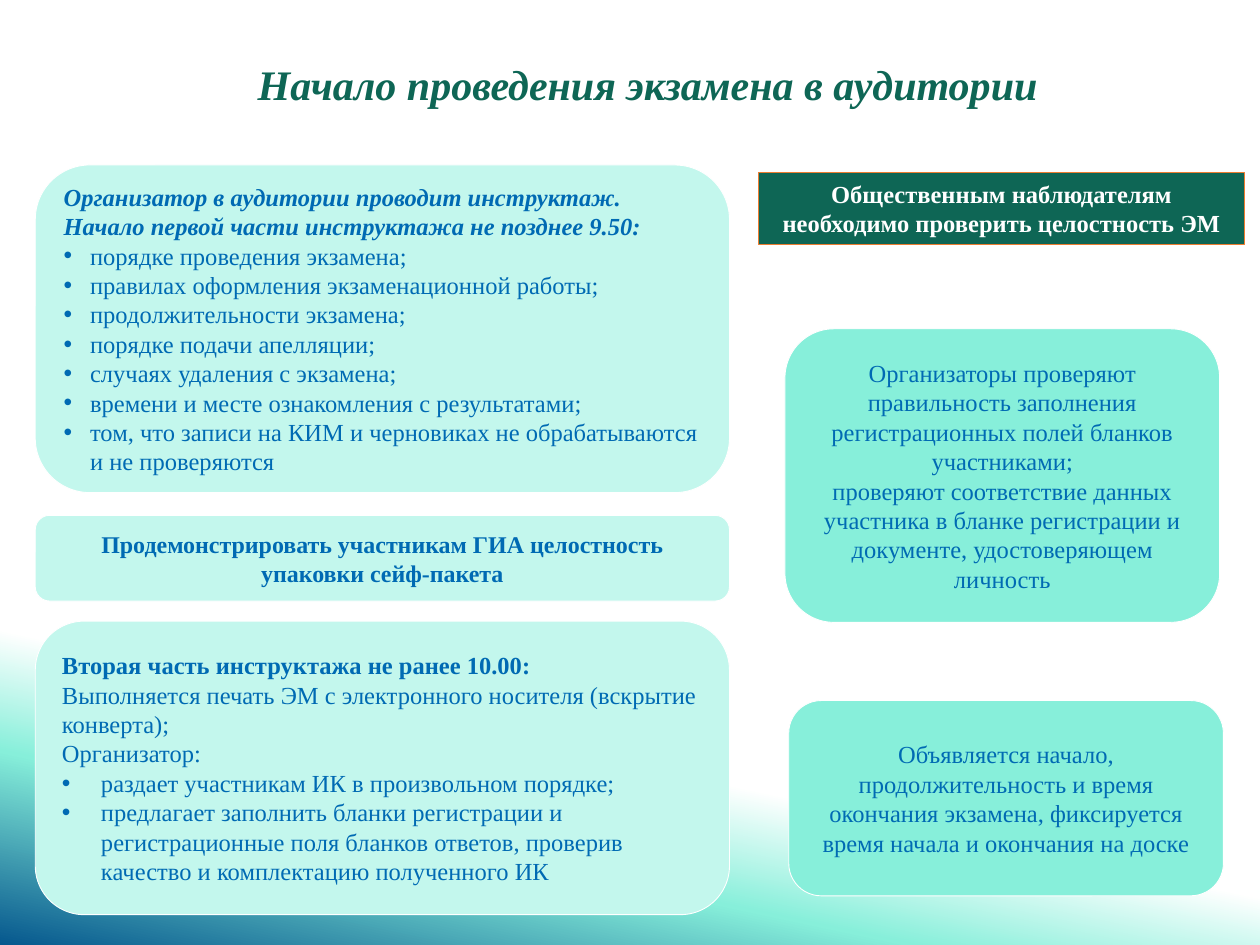
import copy
import pptx
import pptx.util
import pptx.dml.color
import pptx.enum.shapes
import pptx.enum.text
import pptx.oxml.ns
from lxml import etree

Inches = pptx.util.Inches
Pt = pptx.util.Pt
qn = pptx.oxml.ns.qn
SHAPE = pptx.enum.shapes.MSO_SHAPE
ALIGN = pptx.enum.text.PP_ALIGN
ANCHOR = pptx.enum.text.MSO_ANCHOR

FONT = "Times New Roman"
COLORS = {
    "green": "0E6655", "pale": "C3F7ED", "mint": "87EFDA", "blue": "006AB3",
    "navy": "06588E", "white": "FFFFFF", "orange": "ED7D31",
}


def rgb(name):
    return pptx.dml.color.RGBColor.from_string(COLORS[name])


def add_run(p, text, color="blue", size=14, bold=False, italic=False):
    r = p.add_run()
    r.text = text
    f = r.font
    f.name, f.size, f.bold, f.italic = FONT, Pt(size), bold, italic
    f.color.rgb = rgb(color)


def set_bullet(p, indent):
    pPr = p._p.get_or_add_pPr()
    pPr.set("marL", str(Inches(indent)))
    pPr.set("indent", str(-Inches(indent)))
    etree.SubElement(pPr, qn("a:buFont")).set("typeface", "Arial")
    etree.SubElement(pPr, qn("a:buChar")).set("char", "•")


def add_background(s):
    fill = s.background.fill
    fill.gradient()
    fill.gradient_angle = 360 - 102
    gs_list = s.element.find(".//" + qn("a:gsLst"))
    gs_list.append(copy.deepcopy(gs_list[-1]))
    stops = [(0.74, "white"), (0.84, "mint"), (1, "navy")]
    for stop, (position, color) in zip(fill.gradient_stops, stops):
        stop.position = position
        stop.color.rgb = rgb(color)


def add_title(s, box, text):
    title = s.shapes.title
    title.left, title.top, title.width, title.height = map(Inches, box)
    tf = title.text_frame
    tf.vertical_anchor = ANCHOR.MIDDLE
    p = tf.paragraphs[0]
    p.alignment = ALIGN.CENTER
    add_run(p, text, "green", 24, True, True)


def add_panel(s, box, paragraphs, fill, kind=SHAPE.ROUNDED_RECTANGLE, line="white",
              align=ALIGN.CENTER, anchor=ANCHOR.MIDDLE, indent=0):
    """Each paragraph is (text, is_bullet, run format)."""
    sp = s.shapes.add_shape(kind, *map(Inches, box))
    sp.shadow.inherit = False
    sp.fill.solid()
    sp.fill.fore_color.rgb = rgb(fill)
    sp.line.color.rgb = rgb(line)
    sp.line.width = Pt(0.5)
    tf = sp.text_frame
    tf.word_wrap = True
    tf.vertical_anchor = anchor
    for i, (text, is_bullet, style) in enumerate(paragraphs):
        p = tf.add_paragraph() if i else tf.paragraphs[0]
        p.alignment = align
        if is_bullet:
            set_bullet(p, indent)
        add_run(p, text, **style)
    return sp


def add_briefing_column(s, left, width):
    # First part of the briefing
    heading = {"bold": True, "italic": True}
    topics = [
        "порядке проведения экзамена;",
        "правилах оформления экзаменационной работы;",
        "продолжительности экзамена;",
        "порядке подачи апелляции;",
        "случаях удаления с экзамена;",
        "времени и месте ознакомления с результатами;",
        "том, что записи на КИМ и черновиках не обрабатываются и не проверяются",
    ]
    add_panel(s, (left, 1.31, width, 2.6), [
        ("Организатор в аудитории проводит инструктаж.", False, heading),
        ("Начало первой части инструктажа не позднее 9.50:", False, heading),
    ] + [(topic, True, {}) for topic in topics], "pale", align=ALIGN.LEFT, indent=0.21)

    # Sealed package
    add_panel(s, (left, 4.09, width, 0.68), [
        ("Продемонстрировать участникам ГИА целостность упаковки сейф-пакета", False,
         {"size": 13.7, "bold": True}),
    ], "pale")

    # Second part of the briefing
    add_panel(s, (left, 4.93, width, 2.33), [
        ("Вторая часть инструктажа не ранее 10.00:", False, {"bold": True}),
        ("Выполняется печать ЭМ с электронного носителя (вскрытие конверта);", False, {}),
        ("Организатор:", False, {}),
        ("раздает участникам ИК в произвольном порядке;", True, {}),
        ("предлагает заполнить бланки регистрации и регистрационные поля бланков "
         "ответов, проверив качество и комплектацию полученного ИК", True, {}),
    ], "pale", align=ALIGN.LEFT, indent=0.31)


def add_control_column(s, width):
    # Note for observers
    note = add_panel(s, (6.02, 1.37, 3.86, 0.57), [
        ("Общественным наблюдателям необходимо проверить целостность ЭМ", False,
         {"color": "white", "bold": True}),
    ], "green", SHAPE.RECTANGLE, "orange", anchor=ANCHOR.TOP)
    note.text_frame.auto_size = pptx.enum.text.MSO_AUTO_SIZE.SHAPE_TO_FIT_TEXT

    # Start of the exam
    add_panel(s, (6.26, 5.56, width, 1.55), [
        ("Объявляется начало, продолжительность и время окончания экзамена, "
         "фиксируется время начала и окончания на доске", False, {}),
    ], "mint")

    # Checking the forms
    add_panel(s, (6.23, 2.61, width, 2.33), [
        ("Организаторы проверяют правильность заполнения регистрационных полей "
         "бланков участниками;", False, {}),
        ("проверяют соответствие данных участника в бланке регистрации и документе, "
         "удостоверяющем личность", False, {}),
    ], "mint")


def main():
    prs = pptx.Presentation()
    prs.slide_width, prs.slide_height = Inches(10), Inches(7.5)
    s = prs.slides.add_slide(prs.slide_layouts[5])
    add_background(s)
    add_title(s, (0.61, 0.23, 9.06, 0.87), "Начало проведения экзамена в аудитории")
    add_briefing_column(s, 0.28, 5.51)
    add_control_column(s, 3.45)
    prs.save("out.pptx")


if __name__ == "__main__":
    main()
